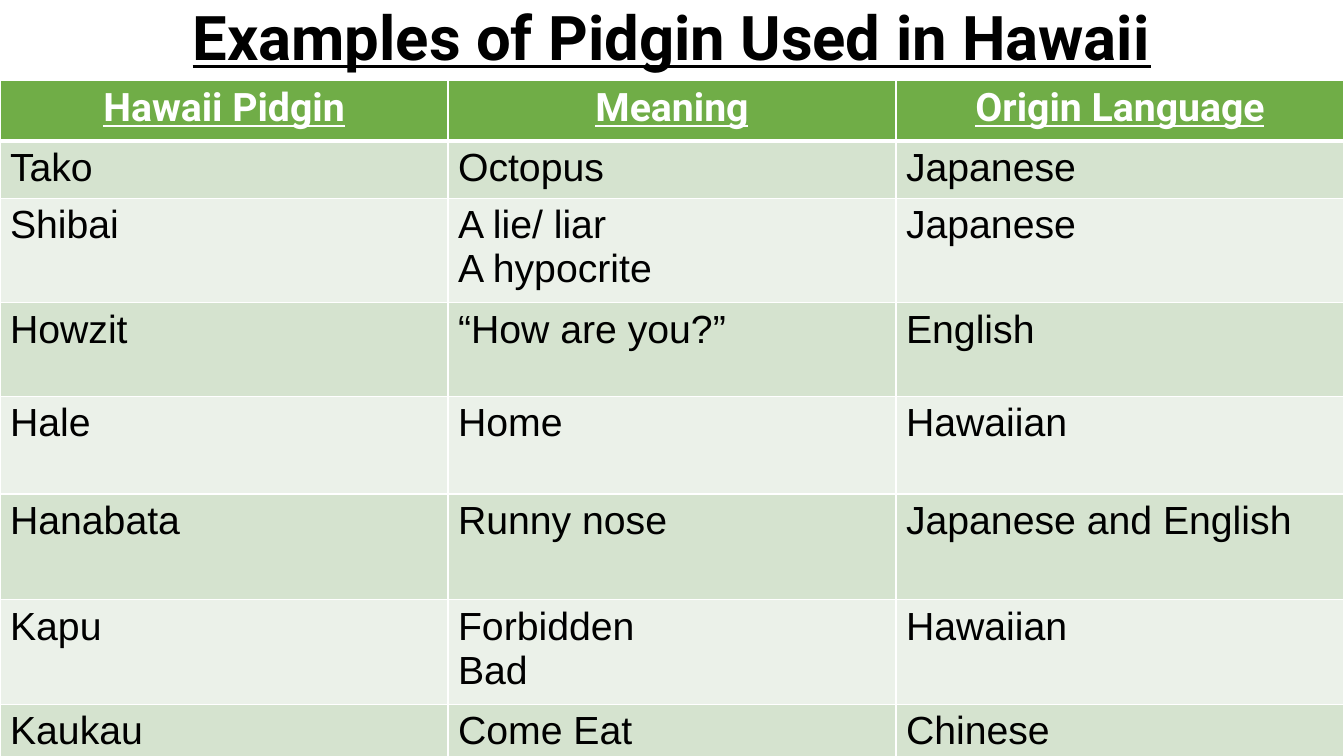
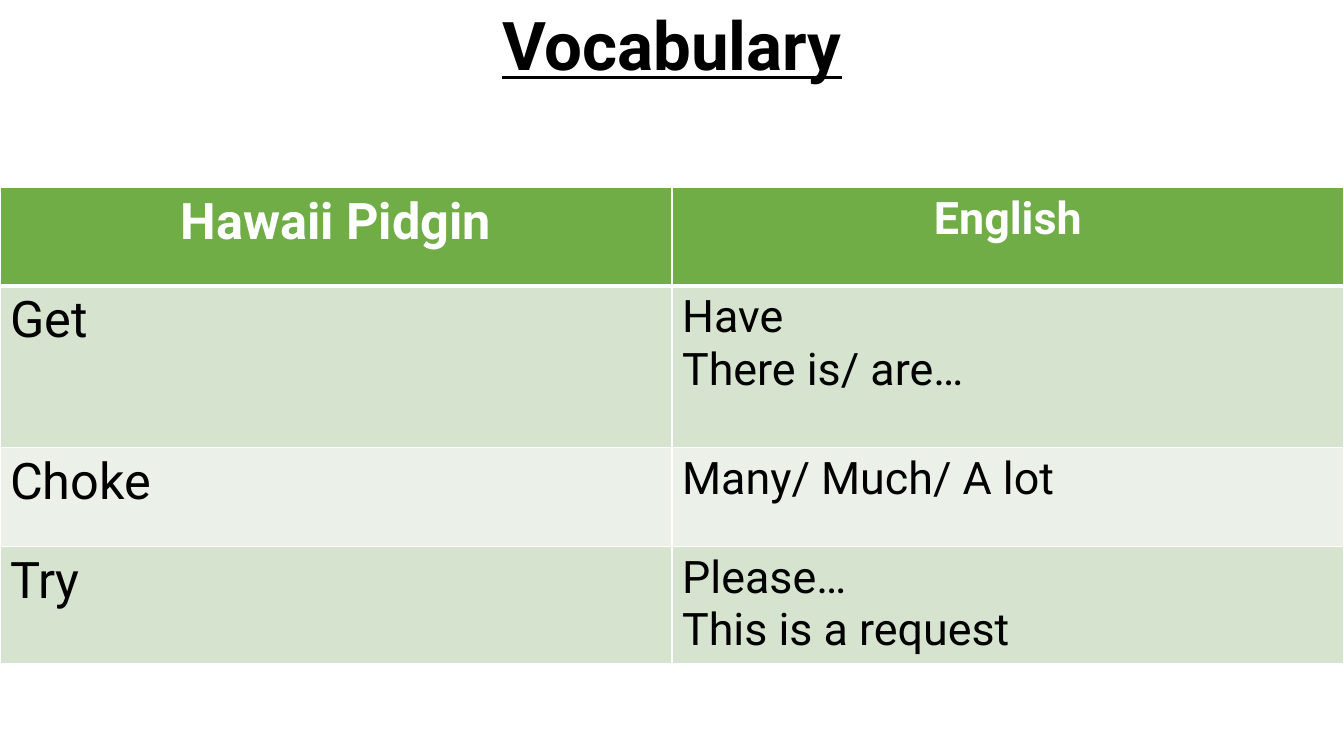
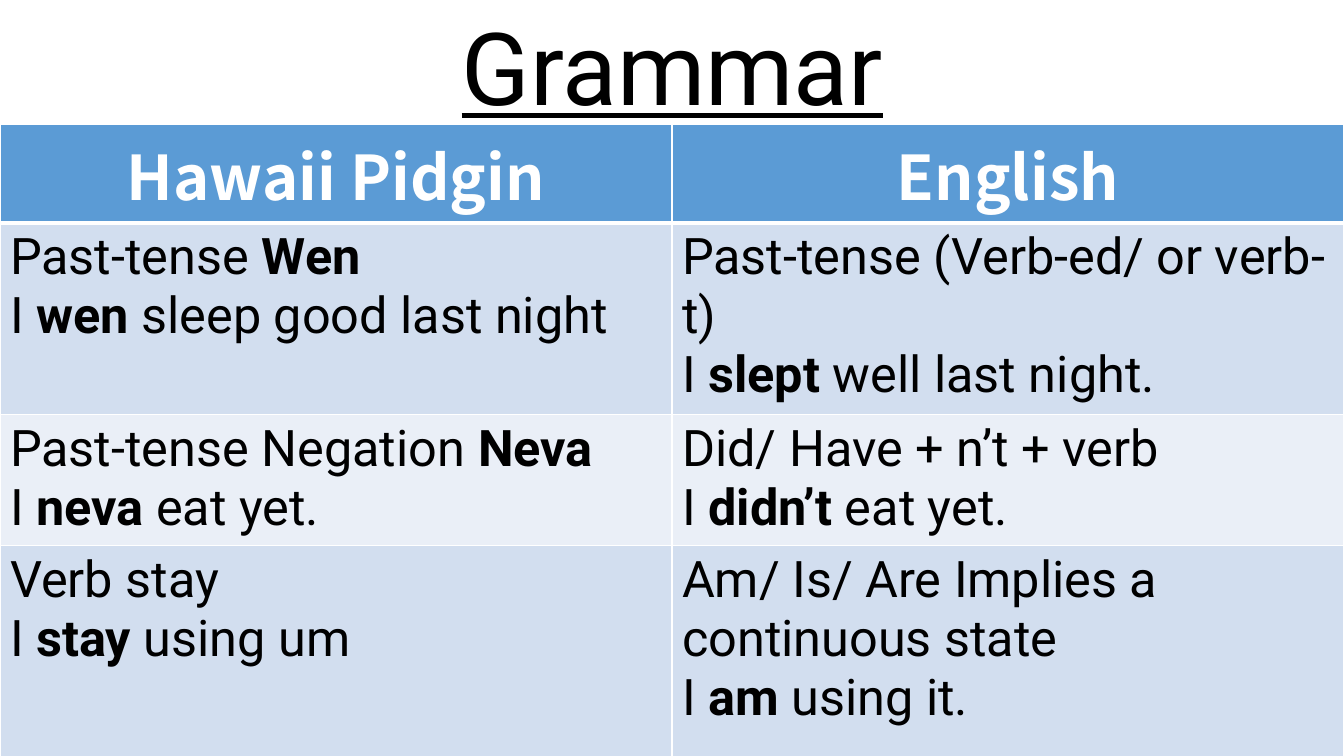
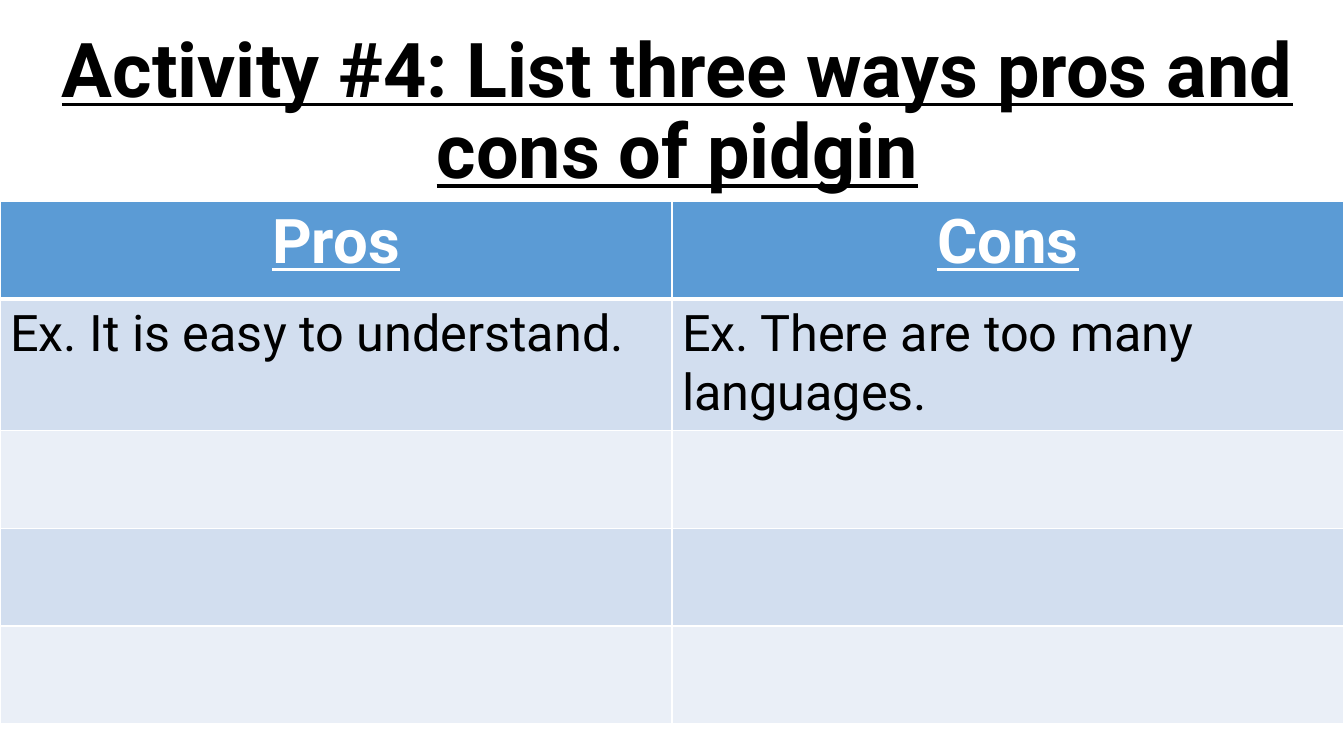
from pptx import Presentation
from pptx.dml.color import RGBColor
from pptx.enum.text import MSO_ANCHOR, PP_ALIGN
from pptx.oxml import parse_xml
from pptx.oxml.ns import nsdecls
from pptx.util import Inches, Pt

CENTER = PP_ALIGN.CENTER
MIDDLE = MSO_ANCHOR.MIDDLE
BLACK = RGBColor(0x00, 0x00, 0x00)
WHITE = RGBColor(0xFF, 0xFF, 0xFF)
GREEN = RGBColor(0x70, 0xAD, 0x47)
GREEN_BANDS = (RGBColor(0xD5, 0xE3, 0xCF), RGBColor(0xEB, 0xF1, 0xE9))
BLUE = RGBColor(0x5B, 0x9B, 0xD5)
BLUE_BANDS = (RGBColor(0xD2, 0xDE, 0xEF), RGBColor(0xEA, 0xEF, 0xF7))
GREEN_THEME = (GREEN, GREEN_BANDS)
BLUE_THEME = (BLUE, BLUE_BANDS)
WIDTH, HEIGHT = 13.33, 7.5
THIN, THICK = 1, 3


class Lesson:
    """Hold the deck style and the current page."""

    def __init__(self):
        self.deck = Presentation()
        self.deck.slide_width = Inches(WIDTH)
        self.deck.slide_height = Inches(HEIGHT)
        self.page = None

    def add_page(self):
        self.page = self.deck.slides.add_slide(self.deck.slide_layouts[6])

    def style(self, span, size, color, font="Roboto", bold=False, underline=False):
        span.font.size = Pt(size)
        span.font.name = font
        span.font.bold = bold
        span.font.underline = underline
        span.font.color.rgb = color

    def title(self, text, place, size, bold=True):
        box = self.page.shapes.add_textbox(*[Inches(length) for length in place])
        frame = box.text_frame
        frame.word_wrap = True
        frame.vertical_anchor = MIDDLE
        frame.text = text
        para = frame.paragraphs[0]
        para.alignment = CENTER
        para.line_spacing = 0.9
        self.style(para.runs[0], size, BLACK, bold=bold, underline=True)

    def borders(self, cell, top, bottom):
        properties = cell._tc.get_or_add_tcPr()
        for side, points in (("L", THIN), ("R", THIN), ("T", top), ("B", bottom)):
            properties.append(parse_xml(
                f'<a:ln{side} {nsdecls("a")} w="{Pt(points)}"><a:solidFill>'
                f'<a:srgbClr val="{WHITE}"/></a:solidFill></a:ln{side}>'))

    def heading(self, cell, text, size, font, underline):
        cell.text_frame.text = text
        para = cell.text_frame.paragraphs[0]
        para.alignment = CENTER
        self.style(para.runs[0], size, WHITE, font, True, underline)

    def entry(self, cell, text, size, font):
        """Write one paragraph a line, with bold between asterisks."""
        frame = cell.text_frame
        for index, line in enumerate(text.split("\n")):
            para = frame.add_paragraph() if index else frame.paragraphs[0]
            for order, piece in enumerate(line.split("*")):
                if piece:
                    span = para.add_run()
                    span.text = piece
                    self.style(span, size, BLACK, font, bold=order % 2 == 1)

    def table(self, top, heights, rows, theme, head_sizes, body_sizes,
              head_font="Roboto", body_font="Roboto", underline=False):
        head_fill, bands = theme
        columns = len(rows[0])
        grid = self.page.shapes.add_table(
            len(rows), columns, 0, Inches(top), Inches(WIDTH), Inches(sum(heights))).table
        grid.horz_banding = False
        for column in grid.columns:
            column.width = Inches(WIDTH / columns)
        for row, (height, texts) in enumerate(zip(heights, rows)):
            grid.rows[row].height = Inches(height)
            for column, text in enumerate(texts):
                cell = grid.cell(row, column)
                self.borders(cell, THICK if row == 1 else THIN, THIN if row else THICK)
                cell.fill.solid()
                if row:
                    cell.fill.fore_color.rgb = bands[(row - 1) % 2]
                    self.entry(cell, text, body_sizes[column], body_font)
                else:
                    cell.fill.fore_color.rgb = head_fill
                    self.heading(cell, text, head_sizes[column], head_font, underline)


def main():
    lesson = Lesson()

    lesson.add_page()
    lesson.title("Examples of Pidgin Used in Hawaii", (0, 0, WIDTH, 0.8), 44)
    lesson.table(0.8, (0.6, 0.53, 0.97, 0.93, 0.97, 1.05, 0.97, 0.95), (
        ("Hawaii Pidgin", "Meaning", "Origin Language"),
        ("Tako", "Octopus", "Japanese"),
        ("Shibai", "A lie/ liar\nA hypocrite", "Japanese"),
        ("Howzit", "“How are you?”", "English"),
        ("Hale", "Home", "Hawaiian"),
        ("Hanabata", "Runny nose", "Japanese and English"),
        ("Kapu", "Forbidden\nBad", "Hawaiian"),
        ("Kaukau", "Come Eat", "Chinese"),
    ), GREEN_THEME, (28, 28, 28), (28, 28, 28), body_font="Arial", underline=True)

    lesson.add_page()
    lesson.title("Vocabulary", (0, 0, WIDTH, 0.97), 48)
    lesson.table(1.86, (0.98, 1.6, 0.98, 1.14), (
        ("Hawaii Pidgin", "English"),
        ("Get", "Have\nThere is/ are…"),
        ("Choke", "Many/ Much/ A lot"),
        ("Try", "Please…\nThis is a request"),
    ), GREEN_THEME, (36, 32), (36, 32))

    lesson.add_page()
    lesson.title("Grammar", (0.92, 0, 11.5, 1.45), 72, bold=False)
    lesson.table(1.23, (0.98, 1.86, 1.27, 2.42), (
        ("Hawaii Pidgin", "English"),
        ("Past-tense *Wen*\nI *wen* sleep good last night",
         "Past-tense (Verb-ed/ or verb-t)\nI *slept* well last night."),
        ("Past-tense Negation *Neva*\nI *neva* eat yet.",
         "Did/ Have + n’t + verb\nI *didn’t* eat yet."),
        ("Verb stay\nI *stay* using um",
         "Am/ Is/ Are Implies a continuous state\nI *am* using it."),
    ), BLUE_THEME, (44, 44), (36, 36), head_font="Noto Sans CJK JP")

    lesson.add_page()
    lesson.title("Activity #4: List three ways pros and cons of pidgin",
                 (0.11, 0.4, 13.22, 1.45), 54)
    lesson.table(2, (0.97, 1.27, 0.97, 0.97, 0.97), (
        ("Pros", "Cons"),
        ("Ex. It is easy to understand.", "Ex. There are too many languages."),
        *[("", "")] * 3,
    ), BLUE_THEME, (44, 44), (36, 36), underline=True)

    lesson.deck.save("out.pptx")


if __name__ == "__main__":
    main()
